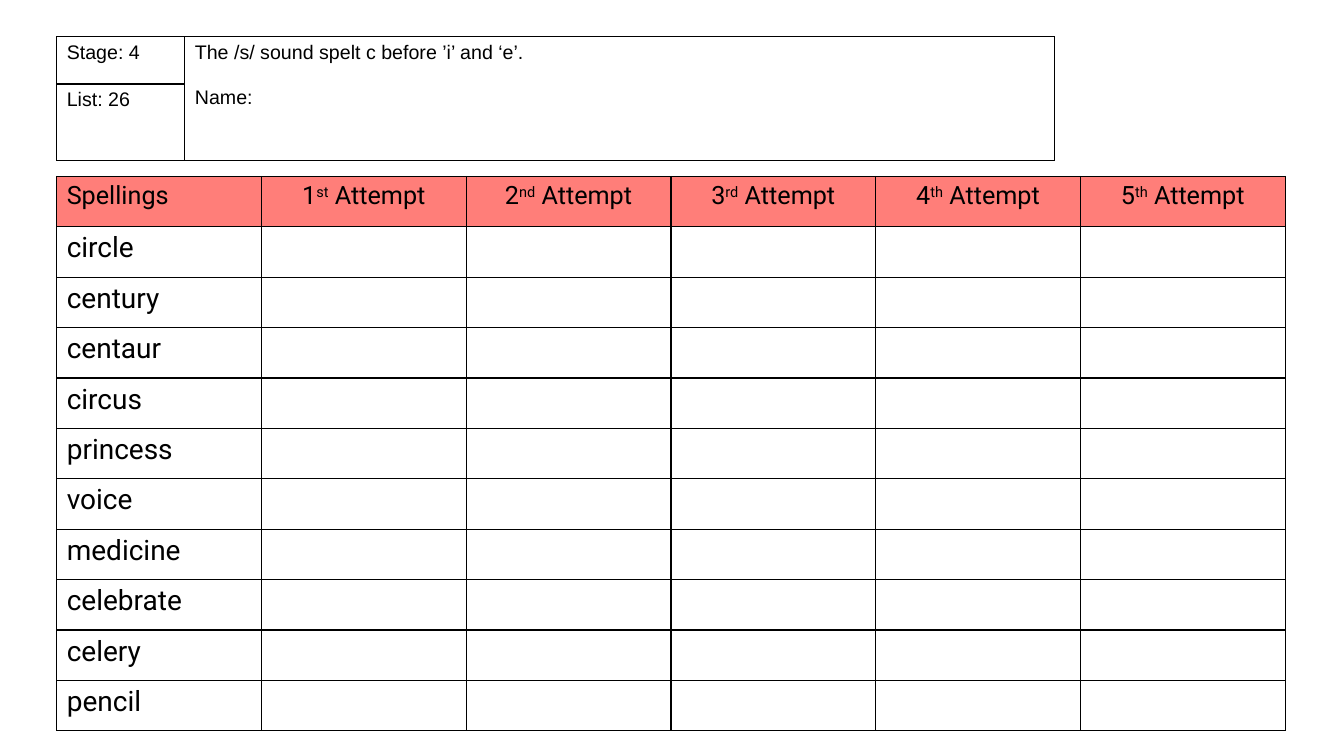
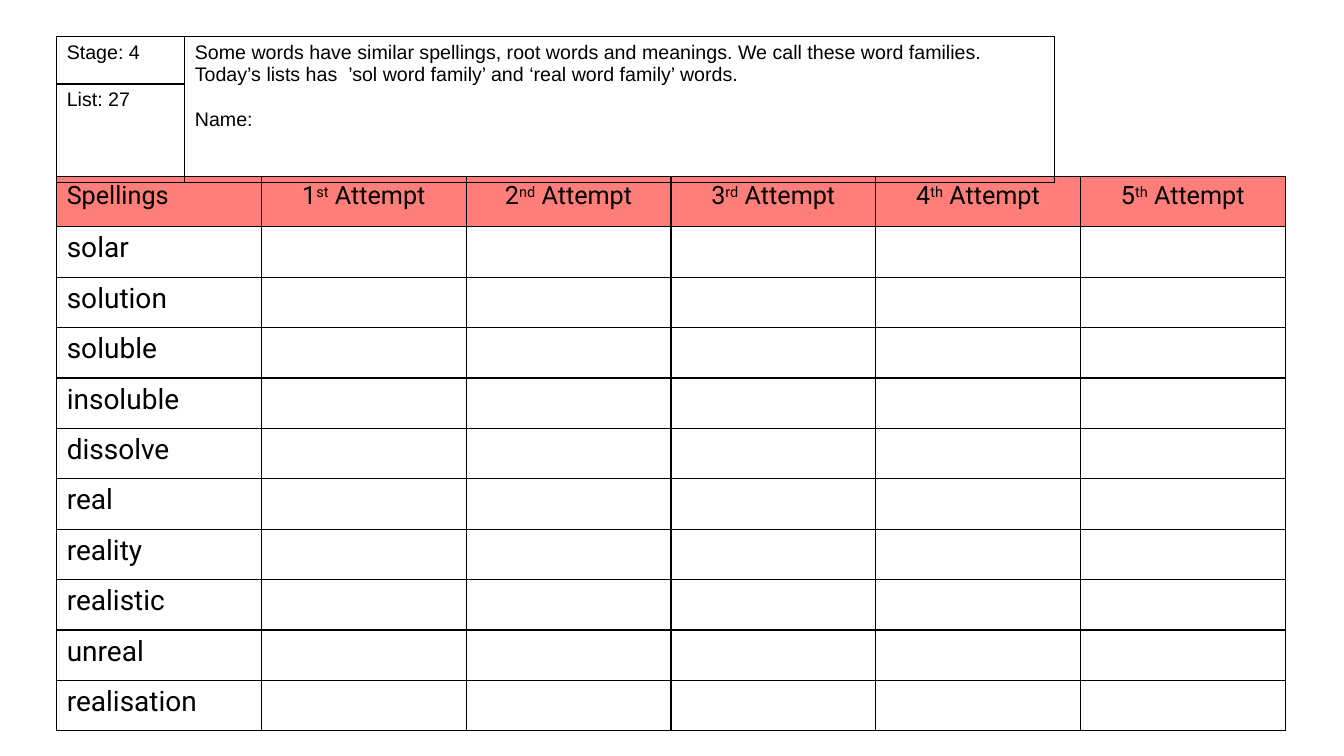
import pptx
import pptx.dml.color
import pptx.enum.text
import pptx.oxml.ns
import pptx.util
from lxml import etree

PX = 9525
SLIDE_WIDTH, SLIDE_HEIGHT = 1280, 720
BLACK = pptx.dml.color.RGBColor(0x00, 0x00, 0x00)
CORAL = pptx.dml.color.RGBColor(0xFF, 0x7E, 0x79)
HEADER_FONT, GRID_FONT = "Arial", "Roboto"
CENTER = pptx.enum.text.PP_ALIGN.CENTER
LEFT = pptx.enum.text.PP_ALIGN.LEFT
ORDINALS = [("1", "st"), ("2", "nd"), ("3", "rd"), ("4", "th"), ("5", "th")]

LISTS = [
    {
        "stage": "Stage: 4",
        "list": "List: 26",
        "rule": "The /s/ sound spelt c before ’i’ and ‘e’.",
        "row_heights": [45, 73],
        "words": ["circle", "century", "centaur", "circus", "princess",
                  "voice", "medicine", "celebrate", "celery", "pencil"],
    },
    {
        "stage": "Stage: 4",
        "list": "List: 27",
        "rule": "Some words have similar spellings, root words and meanings. "
                "We call these word families. Today’s lists has  ’sol word "
                "family’ and ‘real word family’ words.",
        "row_heights": [45, 94],
        "words": ["solar", "solution", "soluble", "insoluble", "dissolve",
                  "real", "reality", "realistic", "unreal", "realisation"],
    },
]


def px(length):
    return pptx.util.Emu(length * PX)


def add_borders(cell):
    properties = cell._tc.get_or_add_tcPr()
    for side in ("lnL", "lnR", "lnT", "lnB"):
        line = etree.SubElement(properties, pptx.oxml.ns.qn(f"a:{side}"), w="12700")
        fill = etree.SubElement(line, pptx.oxml.ns.qn("a:solidFill"))
        etree.SubElement(fill, pptx.oxml.ns.qn("a:srgbClr"), val=str(BLACK))


def add_plain_table(slide, left, top, column_widths, row_heights):
    table = slide.shapes.add_table(
        len(row_heights), len(column_widths), px(left), px(top),
        px(sum(column_widths)), px(sum(row_heights))).table
    table.first_row = False
    table.horz_banding = False
    for column, width in zip(table.columns, column_widths):
        column.width = px(width)
    for row, height in zip(table.rows, row_heights):
        row.height = px(height)
    for cell in table.iter_cells():
        add_borders(cell)
        cell.fill.background()
    return table


def add_run(paragraph, text, font_name, size, superscript=False):
    run = paragraph.add_run()
    run.text = text
    run.font.name = font_name
    run.font.size = pptx.util.Pt(size)
    run.font.color.rgb = BLACK
    if superscript:
        run._r.get_or_add_rPr().set("baseline", "30000")


def add_spelling_grid(slide, left, top, width, height, words):
    column_count, row_count = len(ORDINALS) + 1, len(words) + 1
    table = add_plain_table(slide, left, top,
                            [width // column_count] * column_count,
                            [height // row_count] * row_count)
    for column in range(column_count):
        cell = table.cell(0, column)
        cell.fill.solid()
        cell.fill.fore_color.rgb = CORAL
        paragraph = cell.text_frame.paragraphs[0]
        paragraph.alignment = CENTER if column else LEFT
        if column:
            number, suffix = ORDINALS[column - 1]
            add_run(paragraph, number, GRID_FONT, 18)
            add_run(paragraph, suffix, GRID_FONT, 18, superscript=True)
            add_run(paragraph, " Attempt", GRID_FONT, 18)
        else:
            add_run(paragraph, "Spellings", GRID_FONT, 18)
    for row, word in enumerate(words, start=1):
        add_run(table.cell(row, 0).text_frame.paragraphs[0], word, GRID_FONT, 20)


def add_list_header(slide, left, top, width, label_width, spelling_list):
    table = add_plain_table(slide, left, top, [label_width, width - label_width],
                            spelling_list["row_heights"])
    rule_cell = table.cell(0, 1)
    rule_cell.merge(table.cell(1, 1))
    for cell, key in ((table.cell(0, 0), "stage"), (table.cell(1, 0), "list"),
                      (rule_cell, "rule")):
        add_run(cell.text_frame.paragraphs[0], spelling_list[key], HEADER_FONT, 14)
    name_paragraph = rule_cell.text_frame.add_paragraph()
    name_paragraph.space_before = pptx.util.Pt(16)
    add_run(name_paragraph, "Name:", HEADER_FONT, 14)


def add_list_slide(presentation, spelling_list):
    slide = presentation.slides.add_slide(presentation.slide_layouts[6])
    add_spelling_grid(slide, 54, 168, 1170, 528, spelling_list["words"])
    add_list_header(slide, 54, 35, 950, 122, spelling_list)


def main():
    presentation = pptx.Presentation()
    presentation.slide_width = px(SLIDE_WIDTH)
    presentation.slide_height = px(SLIDE_HEIGHT)
    for spelling_list in LISTS:
        add_list_slide(presentation, spelling_list)
    presentation.save("out.pptx")


if __name__ == "__main__":
    main()
